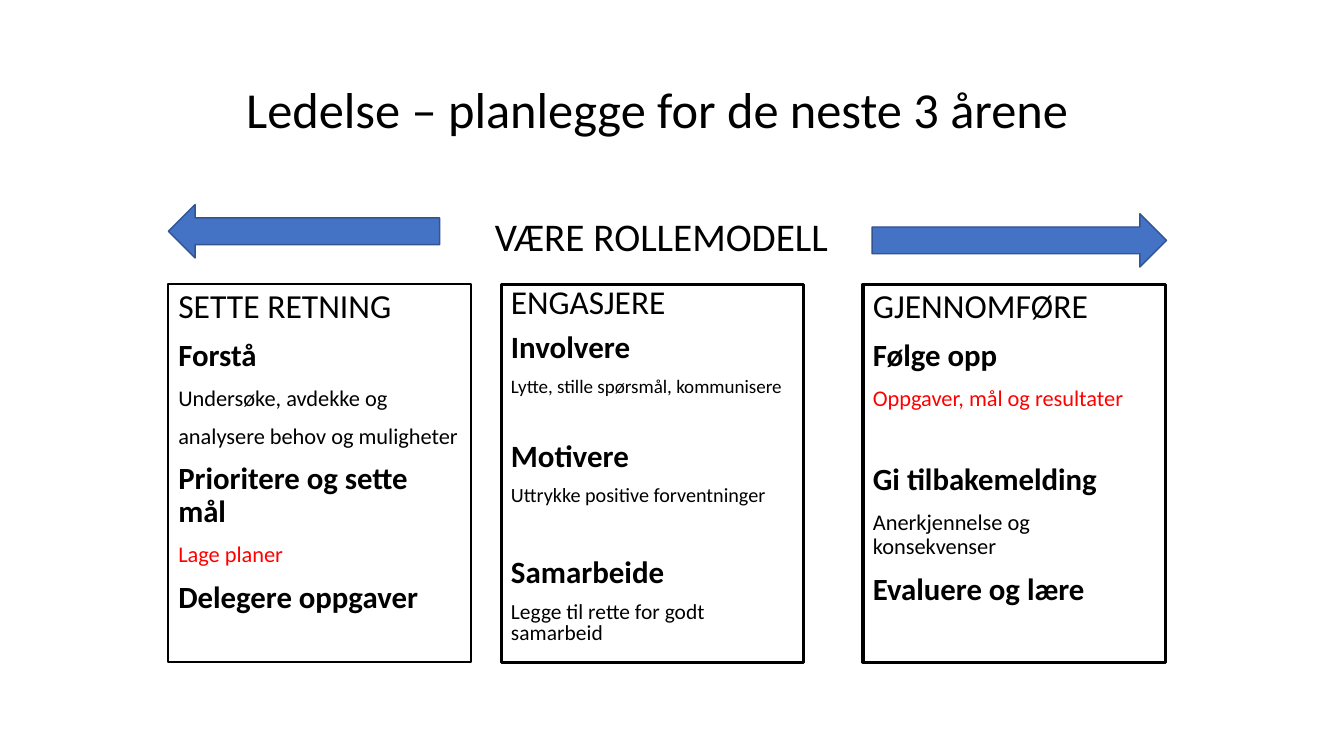
import pptx
import pptx.dml.color
import pptx.enum.shapes
import pptx.enum.text
import pptx.util

Inches = pptx.util.Inches
Pt = pptx.util.Pt
SHAPE = pptx.enum.shapes.MSO_SHAPE
ALIGN = pptx.enum.text.PP_ALIGN
ANCHOR = pptx.enum.text.MSO_ANCHOR

BLACK, RED, BLUE, DARK_BLUE = "000000", "FF0000", "4472C4", "325491"
COLUMN_TOP, COLUMN_WIDTH, COLUMN_HEIGHT = 2.82, 3, 3.75


def color(hex_value):
    return pptx.dml.color.RGBColor.from_string(hex_value)


def set_values(target, values):
    for name, value in values.items():
        setattr(target, name, value)


def add_text(paragraph, text, size, bold=False, font_color=BLACK, **layout):
    set_values(paragraph, layout)
    run = paragraph.add_run()
    run.text = text
    set_values(run.font, {"name": "Calibri", "size": Pt(size), "bold": bold})
    run.font.color.rgb = color(font_color)


def add_heading(slide, text, left, top, width, size):
    """Centred single line that sits on the bottom of its box."""
    box = slide.shapes.add_textbox(
        Inches(left), Inches(top), Inches(width), Inches(1.02))
    set_values(box.text_frame,
               {"word_wrap": True, "vertical_anchor": ANCHOR.BOTTOM})
    add_text(box.text_frame.paragraphs[0], text, size,
             alignment=ALIGN.CENTER, line_spacing=0.9)


def add_outlined_shape(slide, kind, left, top, width, height, line, line_width):
    shape = slide.shapes.add_shape(
        kind, Inches(left), Inches(top), Inches(width), Inches(height))
    shape.shadow.inherit = False
    shape.line.color.rgb = color(line)
    shape.line.width = Pt(line_width)
    return shape


def add_column(slide, left, line_width, line_spacing, entries):
    """Framed column; an entry is text, size, format, space before."""
    frame = add_outlined_shape(slide, SHAPE.RECTANGLE, left, COLUMN_TOP,
                               COLUMN_WIDTH, COLUMN_HEIGHT, BLACK, line_width)
    frame.fill.background()
    text_frame = frame.text_frame
    set_values(text_frame,
               {"word_wrap": True, "vertical_anchor": ANCHOR.TOP})
    for index, (text, size, style, space) in enumerate(entries):
        paragraph = (text_frame.add_paragraph() if index
                     else text_frame.paragraphs[0])
        add_text(paragraph, text, size, **style, alignment=ALIGN.LEFT,
                 line_spacing=line_spacing, space_before=Pt(space))


def add_arrow(slide, kind, left, top, width):
    arrow = add_outlined_shape(slide, kind, left, top, width, 0.53,
                               DARK_BLUE, 1)
    arrow.fill.solid()
    arrow.fill.fore_color.rgb = color(BLUE)


def main():
    presentation = pptx.Presentation()
    set_values(presentation, {"slide_width": Inches(13.33),
                              "slide_height": Inches(7.5)})
    slide = presentation.slides.add_slide(presentation.slide_layouts[6])

    # Title
    add_heading(slide, "Ledelse – planlegge for de neste 3 årene",
                1.92, 0.41, 9.2, 36)

    # Three columns of leadership tasks
    plain, bold, red = {}, {"bold": True}, {"font_color": RED}
    add_column(slide, 1.67, 1.5, 0.9, [
        ("SETTE RETNING", 24, plain, 10),
        ("Forstå", 22, bold, 10),
        ("Undersøke, avdekke og", 16, plain, 10),
        ("analysere behov og muligheter", 16, plain, 10),
        ("Prioritere og sette mål", 22, bold, 10),
        ("Lage planer", 16, red, 10),
        ("Delegere oppgaver", 22, bold, 10),
    ])
    add_column(slide, 4.97, 2.25, 0.8, [
        ("ENGASJERE", 23.8, plain, 10),
        ("Involvere", 22.1, bold, 10),
        ("Lytte, stille spørsmål, kommunisere", 13.6, plain, 10),
        ("Motivere", 22.1, bold, 33),
        ("Uttrykke positive forventninger", 14.4, plain, 10),
        ("Samarbeide", 22.1, bold, 38),
        ("Legge til rette for godt samarbeid", 15.3, plain, 10),
    ])
    add_column(slide, 8.56, 2.25, 0.9, [
        ("GJENNOMFØRE", 24, plain, 10),
        ("Følge opp", 22, bold, 10),
        ("Oppgaver, mål og resultater", 16, red, 10),
        ("Gi tilbakemelding", 22, bold, 38),
        ("Anerkjennelse og konsekvenser", 16, plain, 10),
        ("Evaluere og lære", 22, bold, 10),
    ])

    # Role model heading between two arrows
    add_heading(slide, "VÆRE ROLLEMODELL", 1.56, 1.61, 10, 28)
    add_arrow(slide, SHAPE.RIGHT_ARROW, 8.65, 2.12, 2.92)
    add_arrow(slide, SHAPE.LEFT_ARROW, 1.67, 2.03, 2.69)

    presentation.save("out.pptx")


if __name__ == "__main__":
    main()
